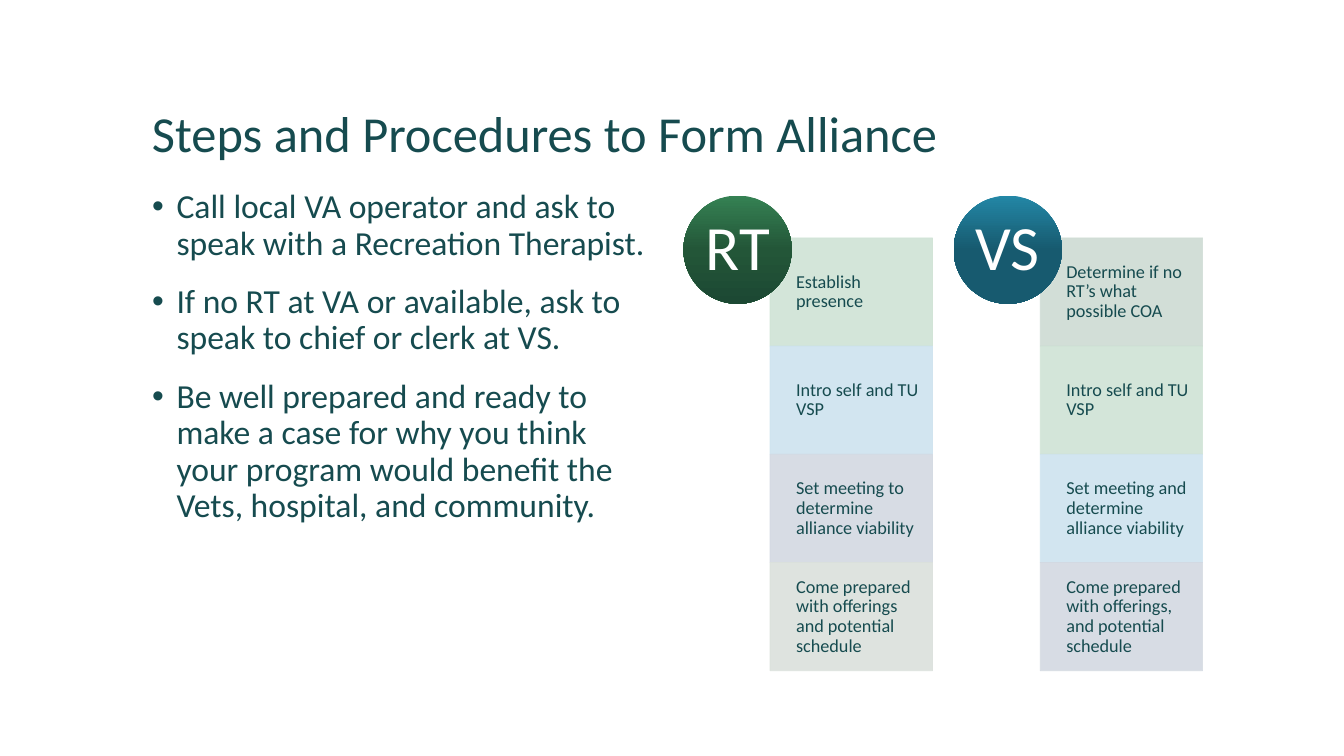
import pptx
import pptx.util
import pptx.oxml
import pptx.oxml.ns
import pptx.dml.color
import pptx.enum.shapes
import pptx.enum.text
import lxml.etree

Pt = pptx.util.Pt
SHAPES = pptx.enum.shapes.MSO_SHAPE
ANCHOR = pptx.enum.text.MSO_ANCHOR
ALIGN = pptx.enum.text.PP_ALIGN

# Content
HEADING = "Steps and Procedures to Form Alliance"
ADVICE = [
    "Call local VA operator and ask to speak with a Recreation Therapist.",
    "If no RT at VA or available, ask to speak to chief or clerk at VS.",
    "Be well prepared and ready to make a case for why you think your program "
    "would benefit the Vets, hospital, and community.",
]
TRACKS = [
    ("RT", ["rt_top", "rt_mid", "rt_low"], [
        ("Establish presence", "mint"),
        ("Intro self and TU VSP", "sky"),
        ("Set meeting to determine alliance viability", "lavender"),
        ("Come prepared with offerings and potential schedule", "stone"),
    ]),
    ("VS", ["vs_top", "vs_low", "vs_low"], [
        ("Determine if no RT’s what possible COA", "sage"),
        ("Intro self and TU VSP", "mint"),
        ("Set meeting and determine alliance viability", "sky"),
        ("Come prepared with offerings, and potential schedule", "lavender"),
    ]),
]

# Format
COLORS = {
    "ink": "164B4F", "white": "FFFFFF",
    "mint": "CFE3D5", "sky": "CEE3EF", "lavender": "D3D9E2",
    "stone": "DBE1DC", "sage": "CEDBD3",
    "rt_top": "358153", "rt_mid": "235638", "rt_low": "1C4833",
    "vs_top": "2387A6", "vs_low": "175A6F",
}
FONT = "Calibri"
HEADING_FRAME = {"vertical_anchor": ANCHOR.BOTTOM}
ADVICE_FRAME = {"vertical_anchor": ANCHOR.TOP}
STEP_FRAME = {"vertical_anchor": ANCHOR.MIDDLE, "margin_left": Pt(18.6), "margin_right": Pt(7.2),
              "margin_top": Pt(7.2), "margin_bottom": Pt(7.2)}
BADGE_FRAME = {"vertical_anchor": ANCHOR.MIDDLE, "margin_left": 0, "margin_right": 0,
               "margin_top": 0, "margin_bottom": 0}

# Layout in points
TRACK_LEFT, TRACK_PITCH = 488.2, 193
BADGE_TOP, BADGE_SIZE = 139.7, 77.3
STEP_INDENT, STEP_TOP = 61.9, 169.9
STEP_WIDTH, STEP_HEIGHT = 116, 77.3
BULLET_INDENT, BULLET_GAP = 17.5, 16


def rgb(color):
    return pptx.dml.color.RGBColor.from_string(COLORS[color])


def set_attributes(target, values):
    for name, value in values.items():
        setattr(target, name, value)


def write(box, lines, size, frame_format, color="ink", align=ALIGN.LEFT, bullets=False):
    frame = box.text_frame
    set_attributes(frame, {"word_wrap": True, **frame_format})
    for index, line in enumerate(lines):
        paragraph = frame.paragraphs[0] if index == 0 else frame.add_paragraph()
        paragraph.text = line
        set_attributes(paragraph, {"alignment": align, "line_spacing": 0.9})
        if bullets:
            paragraph.space_before = Pt(BULLET_GAP if index else 0)
            properties = paragraph._p.get_or_add_pPr()
            properties.set("marL", str(Pt(BULLET_INDENT)))
            properties.set("indent", str(-Pt(BULLET_INDENT)))
            for tag, key, value in (("a:buFont", "typeface", "Arial"), ("a:buChar", "char", "•")):
                lxml.etree.SubElement(properties, pptx.oxml.ns.qn(tag)).set(key, value)
        set_attributes(paragraph.font, {"name": FONT, "size": Pt(size)})
        paragraph.font.color.rgb = rgb(color)


def add_text(left, top, width, height):
    return slide.shapes.add_textbox(Pt(left), Pt(top), Pt(width), Pt(height))


def add_shape(kind, left, top, width, height):
    shape = slide.shapes.add_shape(kind, Pt(left), Pt(top), Pt(width), Pt(height))
    shape.shadow.inherit = False
    return shape


def fill_step(step, color):
    for fill in (step.fill, step.line.fill):
        fill.solid()
        fill.fore_color.rgb = rgb(color)
    step.line.width = Pt(0.5)
    for tone in step._element.spPr.iter(pptx.oxml.ns.qn("a:srgbClr")):
        lxml.etree.SubElement(tone, pptx.oxml.ns.qn("a:alpha")).set("val", "90000")


def fill_badge(badge, colors):
    badge.line.fill.background()
    badge.fill.gradient()
    gradient = badge._element.spPr.find(pptx.oxml.ns.qn("a:gradFill"))
    stops = "".join(
        f'<a:gs pos="{index * 50000}"><a:srgbClr val="{COLORS[color]}"/></a:gs>'
        for index, color in enumerate(colors))
    namespace = pptx.oxml.ns.nsdecls("a")
    gradient.getparent().replace(gradient, pptx.oxml.parse_xml(
        f'<a:gradFill {namespace} rotWithShape="1"><a:gsLst>{stops}</a:gsLst>'
        '<a:lin ang="5400000" scaled="0"/></a:gradFill>'))


deck = pptx.Presentation()
set_attributes(deck, {"slide_width": Pt(960), "slide_height": Pt(540)})
slide = deck.slides.add_slide(deck.slide_layouts[6])

# Heading and advice
write(add_text(101.5, 30, 756, 90), [HEADING], 36, HEADING_FRAME)
write(add_text(101.5, 132, 370, 354), ADVICE, 24, ADVICE_FRAME, bullets=True)

# Tracks: a column of steps with a round badge on its corner
for track, (initials, badge_colors, steps) in enumerate(TRACKS):
    left = TRACK_LEFT + track * TRACK_PITCH
    for row, (label, color) in enumerate(steps):
        step = add_shape(SHAPES.RECTANGLE, left + STEP_INDENT, STEP_TOP + row * STEP_HEIGHT,
                         STEP_WIDTH, STEP_HEIGHT)
        fill_step(step, color)
        write(step, [label], 13, STEP_FRAME)
    badge = add_shape(SHAPES.OVAL, left, BADGE_TOP, BADGE_SIZE, BADGE_SIZE)
    fill_badge(badge, badge_colors)
    write(badge, [initials], 45, BADGE_FRAME, "white", ALIGN.CENTER)

deck.save("out.pptx")
